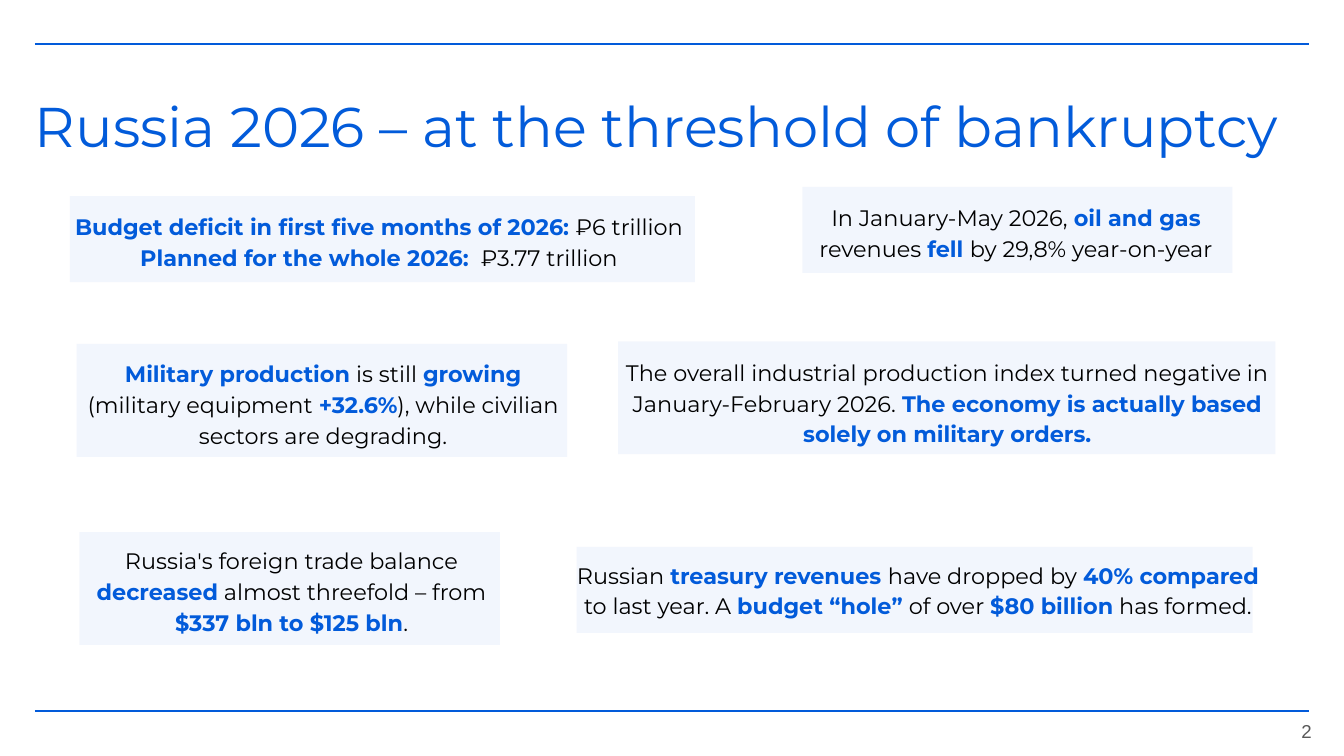
from lxml import etree
from pptx import Presentation
from pptx.dml.color import RGBColor
from pptx.enum.shapes import MSO_CONNECTOR, MSO_SHAPE
from pptx.enum.text import MSO_ANCHOR, MSO_AUTO_SIZE, PP_ALIGN
from pptx.oxml.ns import qn
from pptx.util import Inches, Pt

RECT = MSO_SHAPE.RECTANGLE
STRAIGHT = MSO_CONNECTOR.STRAIGHT
GROW, FIXED = MSO_AUTO_SIZE.SHAPE_TO_FIT_TEXT, MSO_AUTO_SIZE.NONE
TOP, MIDDLE = MSO_ANCHOR.TOP, MSO_ANCHOR.MIDDLE
LEFT, CENTER, RIGHT = PP_ALIGN.LEFT, PP_ALIGN.CENTER, PP_ALIGN.RIGHT

BLUE = RGBColor(0x02, 0x5B, 0xDA)
BLACK = RGBColor(0, 0, 0)
GRAY = RGBColor(0x59, 0x59, 0x59)

WIDTH = Inches(10)
HEIGHT = WIDTH * 9 // 16
COL, ROW = WIDTH / 100, HEIGHT / 56.25
BOLD_MARK = "**"

FACTS = [
    ((5.2, 14.6, 46.5, 6.4), (4.3, 14.6, 47.8, 6.4),
     ["**Budget deficit in first five months of 2026:** ₽6 trillion",
      "**Planned for the whole 2026:**  ₽3.77 trillion"]),
    ((59.7, 13.9, 32, 6.4), (59.2, 13.9, 32.8, 6.4),
     ["In January-May 2026, **oil and gas** revenues **fell **by 29,8% year-on-year"]),
    ((5.7, 25.6, 36.5, 8.4), (4.9, 25.5, 38.3, 8.7),
     ["**Military production** is still **growing **(military equipment "
      "**+32.6%**), while civilian sectors are degrading."]),
    ((46, 25.4, 48.9, 8.4), (45, 25.4, 51, 8.7),
     ["The overall industrial production index turned negative in January-February 2026. "
      "**The economy is actually based solely on military orders.**"]),
    ((5.9, 39.6, 31.3, 8.4), (5.3, 39.4, 32.8, 8.7),
     ["Russia's foreign trade balance **decreased** almost threefold – from "
      "**$337 bln to $125 bln**."]),
    ((42.9, 40.7, 50.3, 6.4), (41.9, 40.5, 52.8, 6.4),
     ["Russian **treasury revenues **have dropped by **40% compared** to last year. "
      "A **budget “hole”** of over **$80 billion** has formed."]),
]


def place(left, top, width, height):
    return [round(v) for v in (left * COL, top * ROW, width * COL, height * ROW)]


def add_rule(s, row):
    x1, y, x2, _ = place(2.6, row, 97.4, 0)
    line = s.shapes.add_connector(STRAIGHT, x1, y, x2, y)
    line.line.color.rgb = BLUE
    line.line.width = Pt(1.13)
    etree.SubElement(line._element.spPr, qn("a:effectLst"))


def add_panel(s, box):
    sp = s.shapes.add_shape(RECT, *place(*box))
    sp.shadow.inherit = False
    sp.fill.solid()
    sp.fill.fore_color.rgb = BLUE
    sp.line.fill.background()
    color = sp._element.spPr.find(qn("a:solidFill"))[0]
    etree.SubElement(color, qn("a:alpha"), val="5000")


def add_text(s, box, lines, size, color, align, font="Montserrat",
             inset=0, anchor=TOP, auto_size=GROW, spacing=1.15):
    tf = s.shapes.add_textbox(*place(*box)).text_frame
    tf.word_wrap = True
    tf.auto_size = auto_size
    tf.vertical_anchor = anchor
    tf.margin_left = tf.margin_right = tf.margin_top = tf.margin_bottom = Inches(inset)
    for i, text in enumerate(lines):
        p = tf.add_paragraph() if i else tf.paragraphs[0]
        p.alignment = align
        p.line_spacing = spacing
        p.font.name = font
        p.font.size = Pt(size)
        for j, part in enumerate(text.split(BOLD_MARK)):
            if part:
                r = p.add_run()
                r.text = part
                r.font.bold = j % 2 == 1
                r.font.color.rgb = BLUE if j % 2 else color


def main():
    prs = Presentation()
    prs.slide_width, prs.slide_height = WIDTH, HEIGHT
    s = prs.slides.add_slide(prs.slide_layouts[6])
    for row in (3.3, 52.9):
        add_rule(s, row)
    add_text(s, (86.6, 53.4, 11.7, 2), ["2"], 10, GRAY, RIGHT, font="Arial",
             inset=0.07, anchor=MIDDLE, auto_size=FIXED, spacing=1)
    add_text(s, (2.6, 6.1, 96.6, 5),
             ["Russia 2026 – at the threshold of bankruptcy"], 30, BLUE, LEFT)
    for panel, box, lines in FACTS:
        add_panel(s, panel)
        add_text(s, box, lines, 12, BLACK, CENTER, inset=0.1)
    prs.save("out.pptx")


if __name__ == "__main__":
    main()
